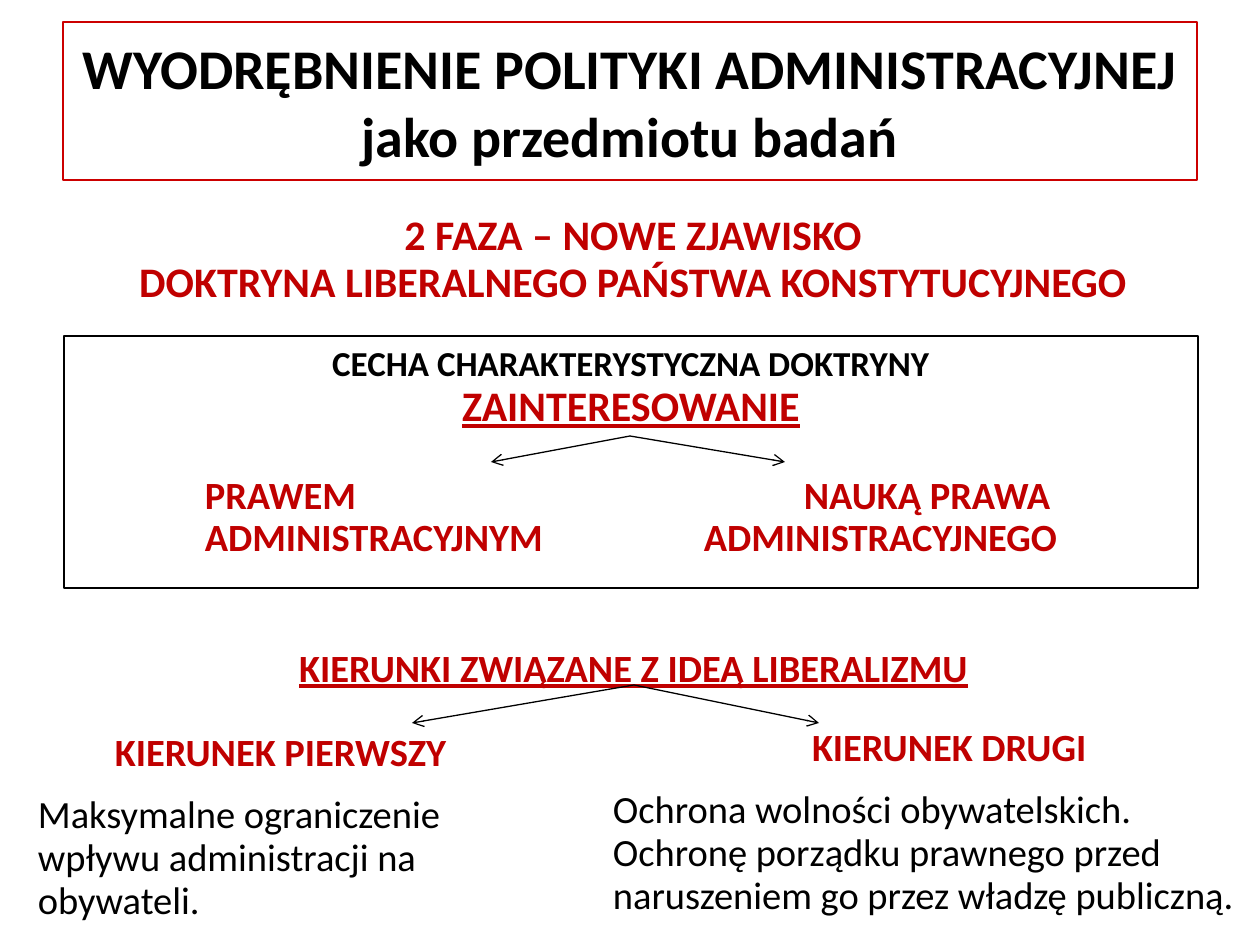
from lxml import etree
from pptx import Presentation
from pptx.dml.color import RGBColor
from pptx.enum.shapes import MSO_CONNECTOR, MSO_SHAPE
from pptx.enum.text import MSO_ANCHOR, PP_ALIGN
from pptx.oxml.ns import qn
from pptx.util import Pt

LINE = MSO_CONNECTOR.STRAIGHT
RECT = MSO_SHAPE.RECTANGLE
TOP, MID = MSO_ANCHOR.TOP, MSO_ANCHOR.MIDDLE
LEFT, MIDDLE = PP_ALIGN.LEFT, PP_ALIGN.CENTER
SCALE = 914400 / 126
HEX = {"black": "000000", "red": "C00000", "edge": "CC0000"}


def px(n):
    return round(n * SCALE)


def paint(name):
    return RGBColor.from_string(HEX[name])


def write(frame, text, size=22, color="red", bold=True, under=False,
          align=LEFT, space=0.93, before=0, indent=0, tabs=()):
    para = frame.paragraphs[0]
    if para.runs:
        para = frame.add_paragraph()
    para.alignment = align
    para.line_spacing = space
    para.space_before = Pt(before)
    props = para._p.get_or_add_pPr()
    if indent:
        props.set("marL", str(px(indent)))
    if tabs:
        stops = etree.SubElement(props, qn("a:tabLst"))
        for stop in tabs:
            etree.SubElement(stops, qn("a:tab"), pos=str(px(stop)), algn="l")
    run = para.add_run()
    run.text = text
    font = run.font
    font.name = "Calibri"
    font.size = Pt(size)
    font.bold = bold
    font.underline = under
    font.color.rgb = paint(color)


def setup(shape, anchor=TOP, top=9):
    frame = shape.text_frame
    frame.word_wrap = True
    frame.vertical_anchor = anchor
    frame.margin_left = frame.margin_right = px(13)
    frame.margin_top, frame.margin_bottom = px(top), px(6)
    return frame


def label(slide, *box):
    return setup(slide.shapes.add_textbox(*map(px, box)))


def panel(slide, *box, edge="black", **kind):
    shape = slide.shapes.add_shape(RECT, *map(px, box))
    shape.shadow.inherit = False
    shape.fill.background()
    shape.line.color.rgb = paint(edge)
    shape.line.width = Pt(0.75)
    return setup(shape, **kind)


def fork(slide, x, y, *ends, drop):
    for end in ends:
        arrow = slide.shapes.add_connector(
            LINE, *map(px, (x, y, end, y + drop)))
        arrow.line.color.rgb = paint("black")
        arrow.line.width = Pt(0.75)
        props = arrow._element.spPr
        etree.SubElement(props.find(qn("a:ln")), qn("a:tailEnd"), type="arrow")
        etree.SubElement(props, qn("a:effectLst"))


def main():
    deck = Presentation()
    deck.slide_width, deck.slide_height = px(1260), px(945)
    slide = deck.slides.add_slide(deck.slide_layouts[6])

    phase = label(slide, 69, 204, 1128, 110)
    for line in ("2 FAZA – NOWE ZJAWISKO",
                 "DOKTRYNA LIBERALNEGO PAŃSTWA KONSTYTUCYJNEGO"):
        write(phase, line, size=24, align=MIDDLE)

    title = panel(slide, 63, 22, 1134, 158, edge="edge", anchor=MID, top=6)
    for line in ("WYODRĘBNIENIE POLITYKI ADMINISTRACYJNEJ",
                 "jako przedmiotu badań"):
        write(title, line, size=32, color="black", align=MIDDLE, space=1.0)

    trait = panel(slide, 64, 336, 1134, 252)
    write(trait, "CECHA CHARAKTERYSTYCZNA DOKTRYNY", size=20, color="black",
          align=MIDDLE)
    write(trait, "ZAINTERESOWANIE", size=24, under=True, align=MIDDLE)
    write(trait, "\tPRAWEM\tNAUKĄ PRAWA", before=25, tabs=(128, 727))
    write(trait, "\tADMINISTRACYJNYM\tADMINISTRACYJNEGO", tabs=(128, 627))

    ways = label(slide, 69, 639, 1129, 48)
    write(ways, "KIERUNKI ZWIĄZANE Z IDEĄ LIBERALIZMU", under=True,
          align=MIDDLE)

    first = label(slide, 25, 723, 556, 189)
    write(first, "KIERUNEK PIERWSZY", indent=77)
    write(first, "Maksymalne ograniczenie wpływu administracji na obywateli.",
          color="black", bold=False, before=11)

    other = label(slide, 600, 718, 660, 224)
    write(other, "KIERUNEK DRUGI", indent=199)
    write(other, "Ochrona wolności obywatelskich.", color="black", bold=False,
          before=11)
    write(other, "Ochronę porządku prawnego przed naruszeniem go przez "
          "władzę publiczną.", color="black", bold=False)

    fork(slide, 630, 436, 785, 491, drop=26)
    fork(slide, 634, 685, 412, 819, drop=38)
    deck.save("out.pptx")


if __name__ == "__main__":
    main()
